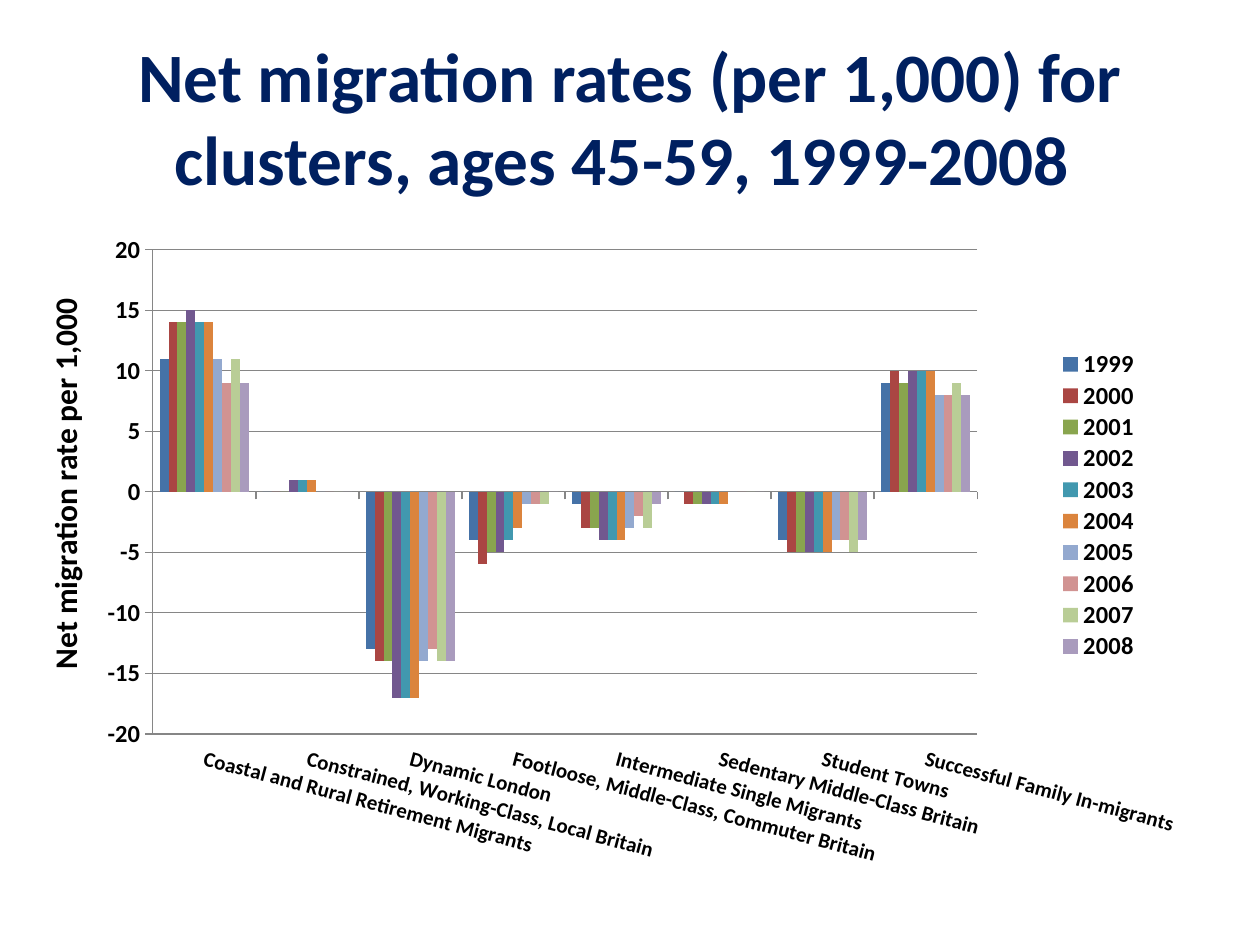
from dataclasses import dataclass

from lxml import etree
from pptx import Presentation
from pptx.chart.data import CategoryChartData
from pptx.dml.color import RGBColor
from pptx.enum.chart import XL_CHART_TYPE, XL_LEGEND_POSITION, XL_TICK_LABEL_POSITION, XL_TICK_MARK
from pptx.enum.text import MSO_ANCHOR, PP_ALIGN
from pptx.oxml.ns import qn
from pptx.util import Emu, Pt

CLUSTERED = XL_CHART_TYPE.COLUMN_CLUSTERED
RIGHT = XL_LEGEND_POSITION.RIGHT
LOW = XL_TICK_LABEL_POSITION.LOW
OUTSIDE = XL_TICK_MARK.OUTSIDE
MIDDLE, TOP = MSO_ANCHOR.MIDDLE, MSO_ANCHOR.TOP
CENTER, LEFT = PP_ALIGN.CENTER, PP_ALIGN.LEFT

EMU_PER_PX = 914400 // 126
FONT = "Calibri"
NAVY, BLACK, GREY = "002060", "000000", "868686"
LABEL_TILT = 15 * 60000

CLUSTERS = [
    "Coastal and Rural Retirement Migrants",
    "Constrained, Working-Class, Local Britain",
    "Dynamic London",
    "Footloose, Middle-Class, Commuter Britain",
    "Intermediate Single Migrants",
    "Sedentary Middle-Class Britain",
    "Student Towns",
    "Successful Family In-migrants",
]


@dataclass(frozen=True)
class Area:
    left: int
    top: int
    width: int
    height: int

    def lengths(self) -> list[Emu]:
        return [px(n) for n in (self.left, self.top, self.width, self.height)]


@dataclass(frozen=True)
class Year:
    name: str
    color: str
    rates: tuple[int, ...]


YEARS = [
    Year("1999", "4572A7", (11, 0, -13, -4, -1, 0, -4, 9)),
    Year("2000", "AA4643", (14, 0, -14, -6, -3, -1, -5, 10)),
    Year("2001", "89A54E", (14, 0, -14, -5, -3, -1, -5, 9)),
    Year("2002", "71588F", (15, 1, -17, -5, -4, -1, -5, 10)),
    Year("2003", "4198AF", (14, 1, -17, -4, -4, -1, -5, 10)),
    Year("2004", "DB843D", (14, 1, -17, -3, -4, -1, -5, 10)),
    Year("2005", "93A9CF", (11, 0, -14, -1, -3, 0, -4, 8)),
    Year("2006", "D19392", (9, 0, -13, -1, -2, 0, -4, 8)),
    Year("2007", "B9CD96", (11, 0, -14, -1, -3, 0, -5, 9)),
    Year("2008", "A99BBD", (9, 0, -14, 0, -1, 0, -4, 8)),
]


def px(count: int) -> Emu:
    return Emu(count * EMU_PER_PX)


def rgb(color: str) -> RGBColor:
    return RGBColor.from_string(color)


def style_font(font, size: float, color: str = BLACK, bold: bool = True) -> None:
    font.name, font.size, font.bold = FONT, Pt(size), bold
    font.color.rgb = rgb(color)


def add_text(page, text: str, area: Area, *, size: float, color: str = BLACK,
             align=LEFT, anchor=TOP, wrap: bool = True, rotation: int = 0) -> None:
    box = page.shapes.add_textbox(*area.lengths())
    box.rotation = rotation
    box.text_frame.word_wrap = wrap
    box.text_frame.vertical_anchor = anchor
    para = box.text_frame.paragraphs[0]
    para.alignment = align
    span = para.add_run()
    span.text = text
    style_font(span.font, size, color)


def set_layout(parent, index: int, fractions: tuple[float, ...], inner: bool = False) -> None:
    for old in parent.findall(qn("c:layout")):
        parent.remove(old)
    layout = etree.Element(qn("c:layout"))
    manual = etree.SubElement(layout, qn("c:manualLayout"))
    settings = [("layoutTarget", "inner")] if inner else []
    settings += [("xMode", "edge"), ("yMode", "edge")]
    settings += zip("xywh", map(str, fractions))
    for tag, value in settings:
        etree.SubElement(manual, qn(f"c:{tag}")).set("val", value)
    parent.insert(index, layout)


def style_axis(axis, size: float) -> None:
    axis.major_tick_mark = OUTSIDE
    axis.format.line.color.rgb = rgb(GREY)
    axis.format.line.width = Pt(0.75)
    style_font(axis.tick_labels.font, size)


def add_rate_chart(page, area: Area) -> None:
    rates = CategoryChartData(number_format="0")
    rates.categories = CLUSTERS
    for year in YEARS:
        rates.add_series(year.name, year.rates)
    chart = page.shapes.add_chart(CLUSTERED, *area.lengths(), rates).chart
    chart.has_title = False
    style_font(chart.font, 10, bold=False)

    plot = chart.plots[0]
    plot.vary_by_categories = False
    plot.gap_width, plot.overlap = 150, 0
    for series, year in zip(plot.series, YEARS):
        series.invert_if_negative = False
        series.format.fill.solid()
        series.format.fill.fore_color.rgb = rgb(year.color)

    style_axis(chart.category_axis, 12)
    chart.category_axis.tick_label_position = LOW
    tilt = chart.element.find(f".//{qn('c:catAx')}/{qn('c:txPr')}/{qn('a:bodyPr')}")
    tilt.set("rot", str(LABEL_TILT))

    scale = chart.value_axis
    style_axis(scale, 14)
    scale.minimum_scale, scale.maximum_scale, scale.major_unit = -20, 20, 5
    scale.tick_labels.number_format = "0"
    scale.tick_labels.number_format_is_linked = False
    scale.major_gridlines.format.line.color.rgb = rgb(GREY)
    scale.major_gridlines.format.line.width = Pt(0.75)

    chart.has_legend = True
    chart.legend.position = RIGHT
    chart.legend.include_in_layout = False
    style_font(chart.legend.font, 14)
    set_layout(chart.element.find(f".//{qn('c:plotArea')}"), 0,
               (0.066, 0.037, 0.727, 0.753), inner=True)
    set_layout(chart.element.find(f".//{qn('c:legend')}"), 1, (0.86, 0.19, 0.08, 0.49))


def main() -> None:
    """Build the net migration slide and save it."""
    deck = Presentation()
    deck.slide_width, deck.slide_height = px(1260), px(945)
    page = deck.slides.add_slide(deck.slide_layouts[6])
    add_text(page, "Net migration rates (per 1,000) for clusters, ages 45-59, 1999-2008 ",
             Area(63, 37, 1134, 158), size=39.6, color=NAVY, align=CENTER, anchor=MIDDLE)
    add_rate_chart(page, Area(78, 226, 1134, 643))
    add_text(page, "Net migration rate per 1,000", Area(-135, 457, 399, 50),
             size=18, wrap=False, rotation=270)
    deck.save("out.pptx")


if __name__ == "__main__":
    main()
